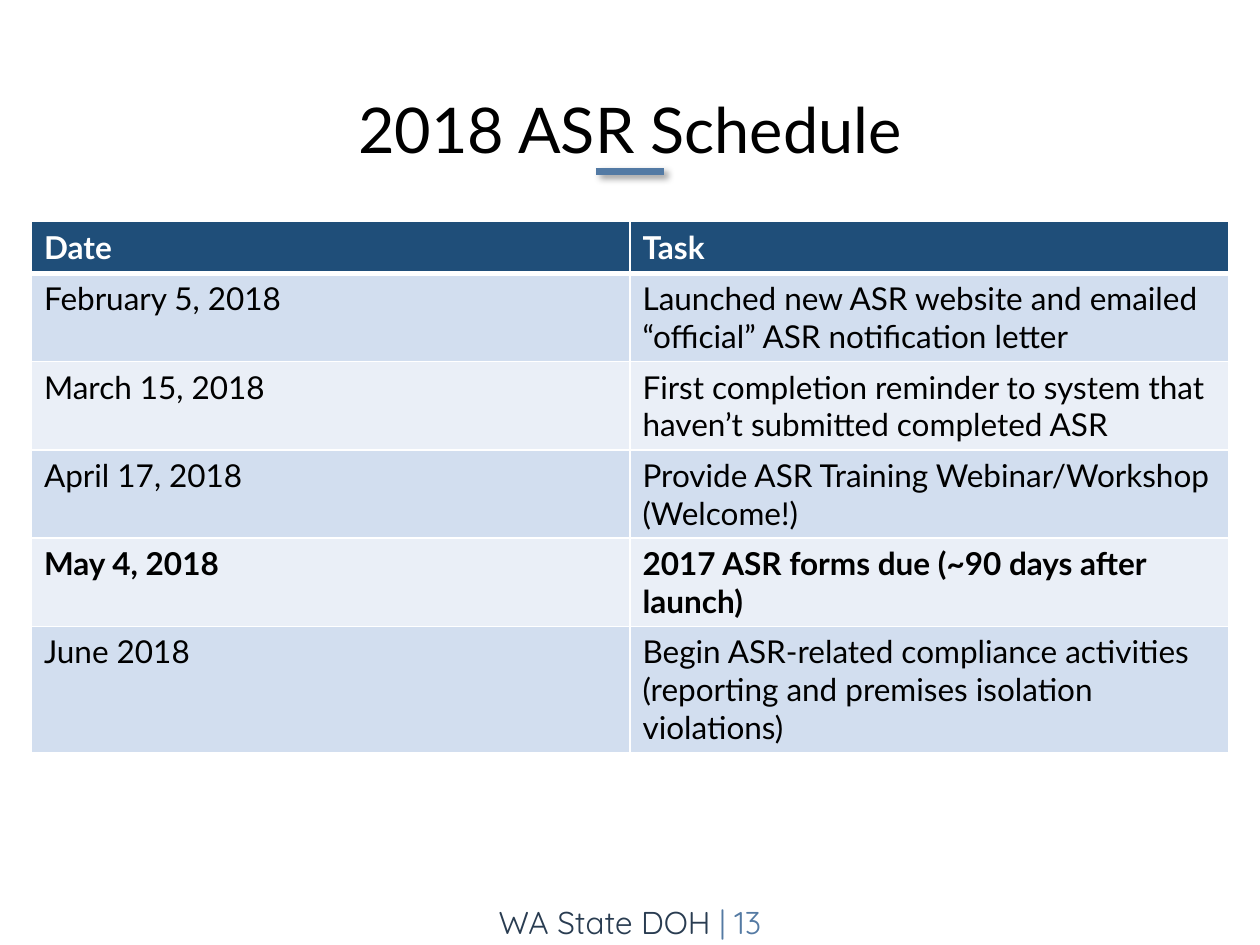
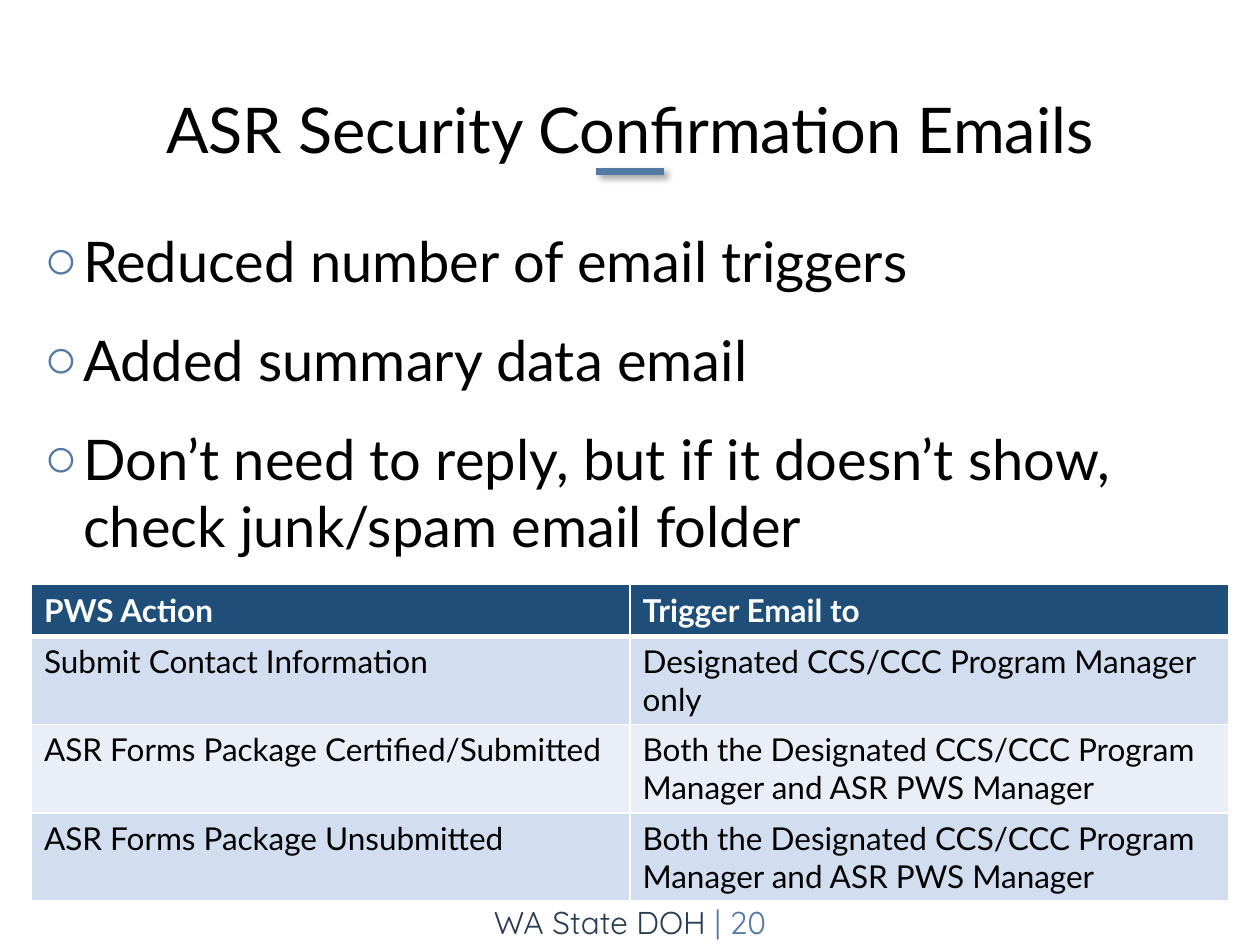
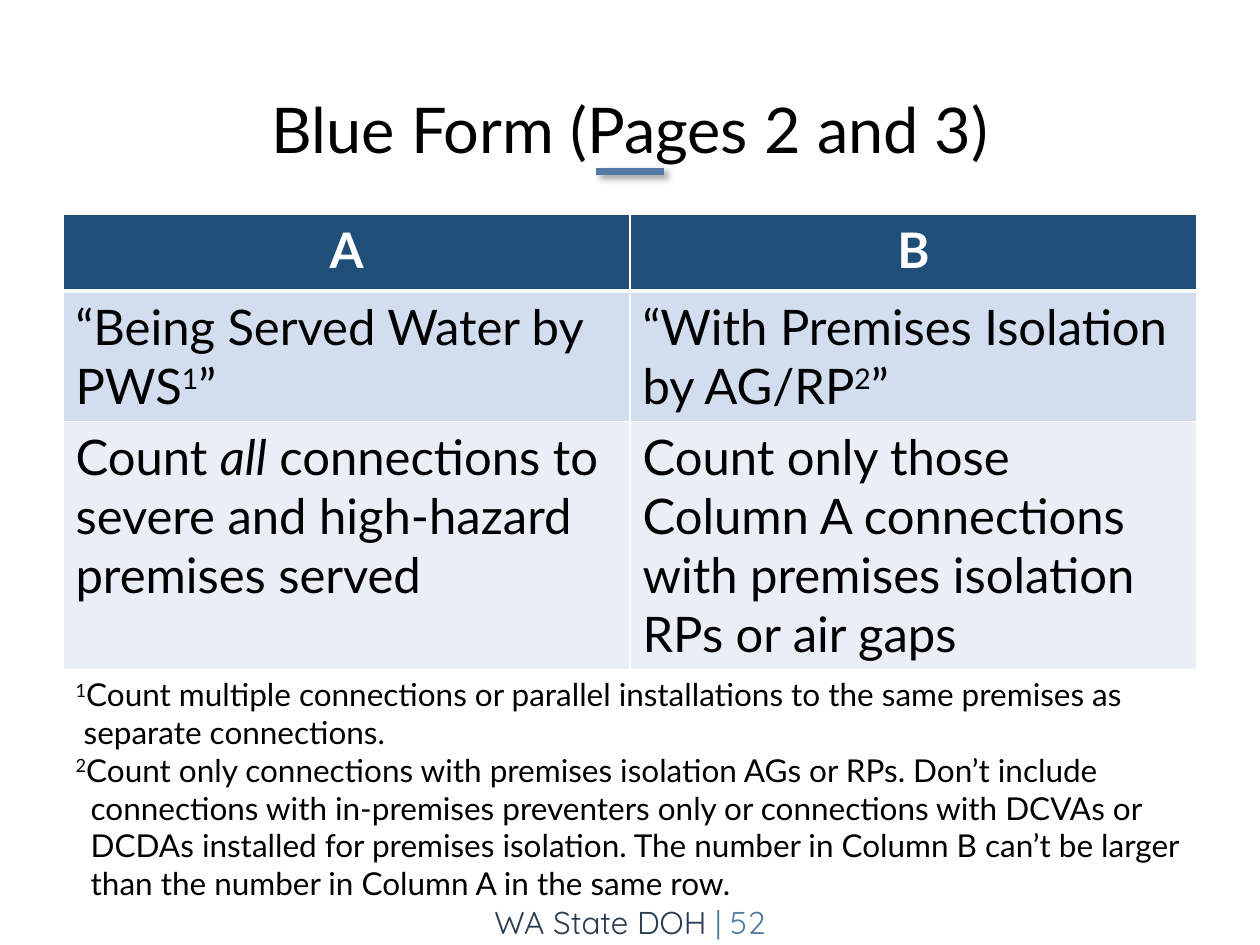
from lxml.etree import SubElement
from pptx import Presentation
from pptx.dml.color import RGBColor
from pptx.enum.shapes import MSO_CONNECTOR
from pptx.enum.text import MSO_ANCHOR, MSO_AUTO_SIZE, PP_ALIGN
from pptx.oxml import parse_xml
from pptx.oxml.ns import nsdecls, qn
from pptx.util import Inches, Pt

GRID_COLS, GRID_ROWS = 40, 30
SLIDE_W, SLIDE_H = Inches(10), Inches(7.5)
TITLE_AND_LIST, TITLE_ONLY = 1, 5

TEXT_FONT, FOOTER_FONT = "Lato", "Quicksand"
BLACK, WHITE = "000000", "FFFFFF"
ACCENT, FOOTER_DARK, FOOTER_BLUE = "537AA4", "293C51", "547AA3"
HEADER_FILL, BANDS = "1F4E79", ("D2DEEF", "EAEFF7")

SCHEDULE = [
    ["Date", "Task"],
    ["February 5, 2018", "Launched new ASR website and emailed “official” ASR notification letter"],
    ["March 15, 2018", "First completion reminder to system that haven’t submitted completed ASR"],
    ["April 17, 2018", "Provide ASR Training Webinar/Workshop (Welcome!)"],
    [[("May 4, 2018", "bold")], [("2017 ASR forms due (~90 days after launch)", "bold")]],
    ["June 2018", "Begin ASR-related compliance activities (reporting and premises isolation violations)"],
]

EMAIL_CHANGES = [
    "Reduced number of email triggers",
    "Added summary data email",
    "Don’t need to reply, but if it doesn’t show, check junk/spam email folder",
]

BOTH_MANAGERS = "Both the Designated CCS/CCC Program Manager and ASR PWS Manager"
EMAIL_TRIGGERS = [
    ["PWS Action", "Trigger Email to"],
    ["Submit Contact Information", "Designated CCS/CCC Program Manager only"],
    ["ASR Forms Package Certified/Submitted", BOTH_MANAGERS],
    ["ASR Forms Package Unsubmitted", BOTH_MANAGERS],
]

FORM_COLUMNS = [
    ["A", "B"],
    [[("“Being Served Water by PWS", ""), ("1", "super"), ("”", "")],
     [("“With Premises Isolation by AG/RP", ""), ("2", "super"), ("”", "")]],
    [[("Count ", ""), ("all", "italic"),
      (" connections to severe and high-hazard premises served", "")],
     "Count only those Column A connections with premises isolation RPs or air gaps"],
    ["", ""],
]

FOOTNOTES = [
    [("1", "super"),
     ("Count multiple connections or parallel installations to the same premises as\n"
      " separate connections.", "")],
    [("2", "super"),
     ("Count only connections with premises isolation AGs or RPs. Don’t include connections "
      "with in-premises preventers only or connections with DCVAs or DCDAs installed for "
      "premises isolation. The number in Column B can’t be larger than the number in "
      "Column A in the same row.", "")],
]


def rgb(hex_color):
    return RGBColor.from_string(hex_color)


def cols(count):
    return round(SLIDE_W * count / GRID_COLS)


def rows(count):
    return round(SLIDE_H * count / GRID_ROWS)


def area(left, top, width, height):
    return cols(left), rows(top), cols(width), rows(height)


def move(shape, left, top, width, height):
    shape.left, shape.top, shape.width, shape.height = area(left, top, width, height)


def write(paragraph, content, size, color=BLACK, font=TEXT_FONT, bold=False):
    """Add plain text, or (text, style) runs where style is bold, italic or super."""
    runs = [(content, "")] if isinstance(content, str) else content
    for text, style in runs:
        for index, line in enumerate(text.split("\n")):
            if index:
                paragraph.add_line_break()
            run = paragraph.add_run()
            run.text = line
            run.font.name, run.font.size = font, Pt(size)
            run.font.color.rgb = rgb(color)
            run.font.bold = bold or style == "bold"
            run.font.italic = style == "italic"
            if style == "super":
                run.font._element.set("baseline", "30000")


def indent(paragraph, inches):
    properties = paragraph._p.get_or_add_pPr()
    properties.set("marL", str(Inches(inches)))
    properties.set("indent", str(-Inches(inches)))
    return properties


def add_accent_line(slide):
    line = slide.shapes.add_connector(
        MSO_CONNECTOR.STRAIGHT, cols(18.92), rows(5.44), cols(21.08), rows(5.44))
    line.line.color.rgb = rgb(ACCENT)
    line.line.width = Pt(4)
    line._element.spPr.append(parse_xml(
        f'<a:effectLst {nsdecls("a")}><a:outerShdw blurRad="{Pt(4)}" dist="{Pt(3)}" '
        f'dir="2700000" algn="tl" rotWithShape="0"><a:srgbClr val="{BLACK}">'
        '<a:alpha val="40000"/></a:srgbClr></a:outerShdw></a:effectLst>'))


def add_footer(slide, page):
    frame = slide.shapes.add_textbox(*area(0, 28.48, 40, 1.6)).text_frame
    frame.word_wrap = True
    frame.auto_size = MSO_AUTO_SIZE.SHAPE_TO_FIT_TEXT
    paragraph = frame.paragraphs[0]
    paragraph.alignment = PP_ALIGN.CENTER
    write(paragraph, "WA State DOH ", 18, FOOTER_DARK, FOOTER_FONT)
    write(paragraph, f"| {page}", 18, FOOTER_BLUE, FOOTER_FONT)


def add_page(deck, layout, title, page):
    """Add a slide with the shared title, accent line and footer."""
    slide = deck.slides.add_slide(deck.slide_layouts[layout])
    add_accent_line(slide)
    add_footer(slide, page)
    heading = slide.shapes.title
    move(heading, 0, 2.96, 40, 2.12)
    frame = heading.text_frame
    frame.vertical_anchor = MSO_ANCHOR.TOP
    frame.auto_size = MSO_AUTO_SIZE.NONE
    paragraph = frame.paragraphs[0]
    paragraph.alignment = PP_ALIGN.CENTER
    paragraph.line_spacing = 0.9
    paragraph.space_before = Pt(10)
    write(paragraph, title, 36)
    return slide


def fill_list(slide, items):
    body = slide.placeholders[1]
    move(body, 1, 7, 38, 21.12)
    frame = body.text_frame
    frame.auto_size = MSO_AUTO_SIZE.NONE
    for index, item in enumerate(items):
        paragraph = frame.add_paragraph() if index else frame.paragraphs[0]
        paragraph.space_before, paragraph.space_after = Pt(12), Pt(6)
        properties = indent(paragraph, 0.31)
        bullet_color = SubElement(properties, qn("a:buClr"))
        SubElement(bullet_color, qn("a:srgbClr"), val=ACCENT)
        SubElement(properties, qn("a:buChar"), char="○")
        write(paragraph, item, 32)


def paint_cell(cell, color, bottom_width=1):
    cell.fill.solid()
    cell.fill.fore_color.rgb = rgb(color)
    properties = cell._tc.get_or_add_tcPr()
    for index, side in enumerate("LRTB"):
        width = bottom_width if side == "B" else 1
        properties.insert(index, parse_xml(
            f'<a:ln{side} {nsdecls("a")} w="{Pt(width)}"><a:solidFill>'
            f'<a:srgbClr val="{WHITE}"/></a:solidFill></a:ln{side}>'))


def add_banded_table(slide, content, left, top, row_heights, size=18, header_align=None):
    """Centre a table of equal columns, with a dark header over alternating bands."""
    width = GRID_COLS - 2 * left
    columns = len(content[0])
    table = slide.shapes.add_table(
        len(content), columns, *area(left, top, width, sum(row_heights))).table
    for column in table.columns:
        column.width = cols(width / columns)
    for r, (row, height) in enumerate(zip(content, row_heights)):
        table.rows[r].height = rows(height)
        for c, text in enumerate(row):
            cell = table.cell(r, c)
            paragraph = cell.text_frame.paragraphs[0]
            if r == 0:
                paint_cell(cell, HEADER_FILL, bottom_width=3)
                paragraph.alignment = header_align
                write(paragraph, text, size, WHITE, bold=True)
            else:
                paint_cell(cell, BANDS[(r - 1) % 2])
                if text:
                    write(paragraph, text, size)
    return table


def fill_footnotes(table, notes):
    """Merge the last row into one white cell that holds the notes."""
    last = len(table.rows) - 1
    cell = table.cell(last, 0)
    cell.merge(table.cell(last, len(table.columns) - 1))
    cell.fill.fore_color.rgb = rgb(WHITE)
    first, second = cell.text_frame.paragraphs[0], cell.text_frame.add_paragraph()
    indent(second, 0.12)
    for paragraph, note in zip((first, second), notes):
        write(paragraph, note, 18)


def main():
    deck = Presentation()
    deck.slide_width, deck.slide_height = SLIDE_W, SLIDE_H

    schedule = add_page(deck, TITLE_ONLY, "2018 ASR Schedule", 13)
    add_banded_table(schedule, SCHEDULE, 1, 7.04, [1.64] * len(SCHEDULE))

    emails = add_page(deck, TITLE_AND_LIST, "ASR Security Confirmation Emails", 20)
    fill_list(emails, EMAIL_CHANGES)
    add_banded_table(emails, EMAIL_TRIGGERS, 1, 18.56, [1.64] * len(EMAIL_TRIGGERS))

    blue_form = add_page(deck, TITLE_ONLY, "Blue Form (Pages 2 and 3)", 52)
    form_table = add_banded_table(blue_form, FORM_COLUMNS, 2, 6.8, [2.44, 2.36, 6, 6],
                                  size=28, header_align=PP_ALIGN.CENTER)
    fill_footnotes(form_table, FOOTNOTES)

    deck.save("out.pptx")


if __name__ == "__main__":
    main()
